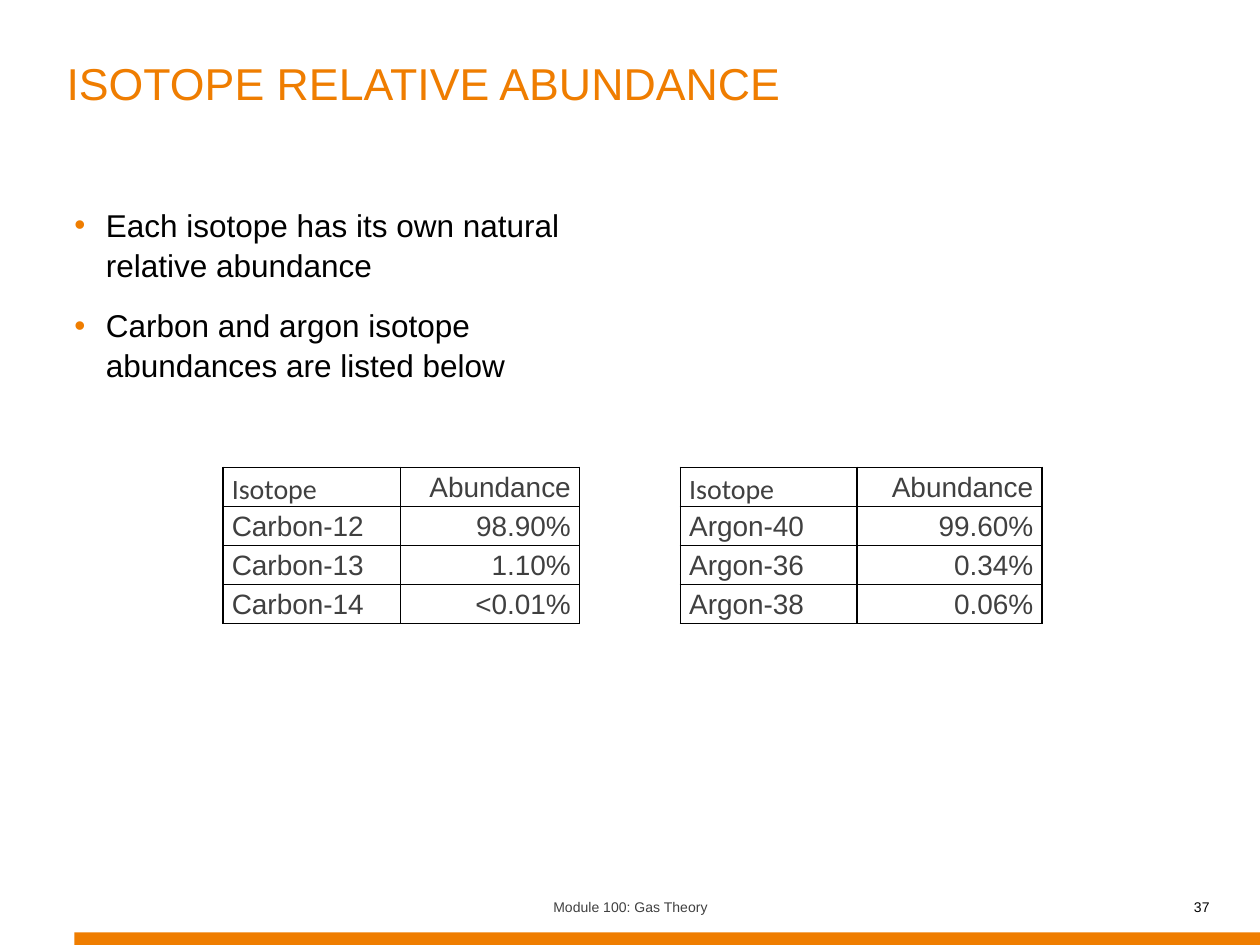
from lxml.etree import SubElement
from pptx import Presentation
from pptx.dml.color import RGBColor
from pptx.enum.shapes import MSO_SHAPE
from pptx.enum.text import MSO_ANCHOR, PP_ALIGN
from pptx.oxml.ns import qn
from pptx.util import Inches, Pt

COLORS = {"orange": "EF7D00", "gray": "404040", "black": "000000"}
CARBON = [("Isotope", "Abundance"), ("Carbon-12", "98.90%"),
          ("Carbon-13", "1.10%"), ("Carbon-14", "<0.01%")]
ARGON = [("Isotope", "Abundance"), ("Argon-40", "99.60%"),
         ("Argon-36", "0.34%"), ("Argon-38", "0.06%")]


def style(para, size, color, face="Arial"):
    """Format every run of a paragraph."""
    for run in para.runs:
        run.font.size = Pt(size)
        run.font.name = face
        run.font.color.rgb = RGBColor.from_string(COLORS[color])


def add_text(slide, box, text, size, color, side=0.1):
    """Add a wrapped text box and return its frame."""
    frame = slide.shapes.add_textbox(*map(Inches, box)).text_frame
    frame.word_wrap = True
    frame.margin_left = frame.margin_right = Inches(side)
    frame.text = text
    for para in frame.paragraphs:
        style(para, size, color)
    return frame


def add_title(slide, box, text):
    """Add the raised title."""
    frame = add_text(slide, box, text, 44, "orange")
    run = frame.paragraphs[0].runs[0]
    run.font._element.set("baseline", "30000")


def add_points(slide, box, points):
    """Add the bulleted list."""
    frame = add_text(slide, box, "\n".join(points), 18, "black", 0)
    for para in frame.paragraphs:
        props = para._p.get_or_add_pPr()
        props.set("marL", str(Inches(0.25)))
        props.set("indent", str(-Inches(0.25)))
        para.line_spacing = 1.05
        para.space_after = Pt(12)
        tint = SubElement(props, qn("a:buClr"))
        SubElement(tint, qn("a:srgbClr"), val=COLORS["orange"])
        SubElement(props, qn("a:buFont"), typeface="Arial")
        SubElement(props, qn("a:buChar"), char="•")


def add_edges(cell):
    """Draw a thin black line on each side of a cell."""
    props = cell._tc.get_or_add_tcPr()
    for spot, side in enumerate(("lnL", "lnR", "lnT", "lnB")):
        line = props.makeelement(qn(f"a:{side}"), {"w": str(Pt(1))})
        fill = SubElement(line, qn("a:solidFill"))
        SubElement(fill, qn("a:srgbClr"), val=COLORS["black"])
        props.insert(spot, line)


def add_grid(slide, left, top, widths, rows):
    """Add one isotope table."""
    high = 0.31
    table = slide.shapes.add_table(
        len(rows), len(widths), Inches(left), Inches(top),
        Inches(sum(widths)), Inches(high * len(rows))).table
    table.first_row = table.horz_banding = False
    for col, width in zip(table.columns, widths):
        col.width = Inches(width)
    for r, row in enumerate(rows):
        table.rows[r].height = Inches(high)
        for c, text in enumerate(row):
            cell = table.cell(r, c)
            cell.fill.background()
            cell.margin_left = cell.margin_right = Inches(0.07)
            cell.margin_top = cell.margin_bottom = 0
            para = cell.text_frame.paragraphs[0]
            para.text = text
            para.line_spacing = 1.15
            para.alignment = PP_ALIGN.RIGHT if c else PP_ALIGN.LEFT
            style(para, 16, "gray", "Arial" if r or c else "Calibri")
            add_edges(cell)


def add_foot(slide, left, top, width):
    """Add the bar, module name and page number."""
    bar = slide.shapes.add_shape(
        MSO_SHAPE.RECTANGLE, Inches(left), Inches(top + 0.4),
        Inches(width), Inches(0.1))
    bar.shadow.inherit = False
    bar.fill.solid()
    bar.fill.fore_color.rgb = RGBColor.from_string(COLORS["orange"])
    bar.line.fill.background()
    name = add_text(slide, (left + 2.83, top, 3.17, 0.4),
                    "Module 100: Gas Theory", 8, "gray")
    page = add_text(slide, (left + 6.68, top, 2.33, 0.4),
                    "37", 8, "black", 0)
    for frame, align in ((name, PP_ALIGN.CENTER), (page, PP_ALIGN.RIGHT)):
        frame.vertical_anchor = MSO_ANCHOR.MIDDLE
        frame.paragraphs[0].alignment = align


def main():
    """Build and save the slide."""
    deck = Presentation()
    deck.slide_width, deck.slide_height = Inches(10), Inches(7.5)
    slide = deck.slides.add_slide(deck.slide_layouts[6])
    add_foot(slide, 0.59, 7, 9.41)
    add_points(slide, (0.59, 1.57, 4.55, 4.8), [
        "Each isotope has its own natural relative abundance",
        "Carbon and argon isotope abundances are listed below"])
    add_title(slide, (0.43, 0.32, 9, 1.25), "ISOTOPE RELATIVE ABUNDANCE")
    add_grid(slide, 1.77, 3.71, (1.41, 1.42), CARBON)
    add_grid(slide, 5.4, 3.71, (1.4, 1.47), ARGON)
    deck.save("out.pptx")


if __name__ == "__main__":
    main()
